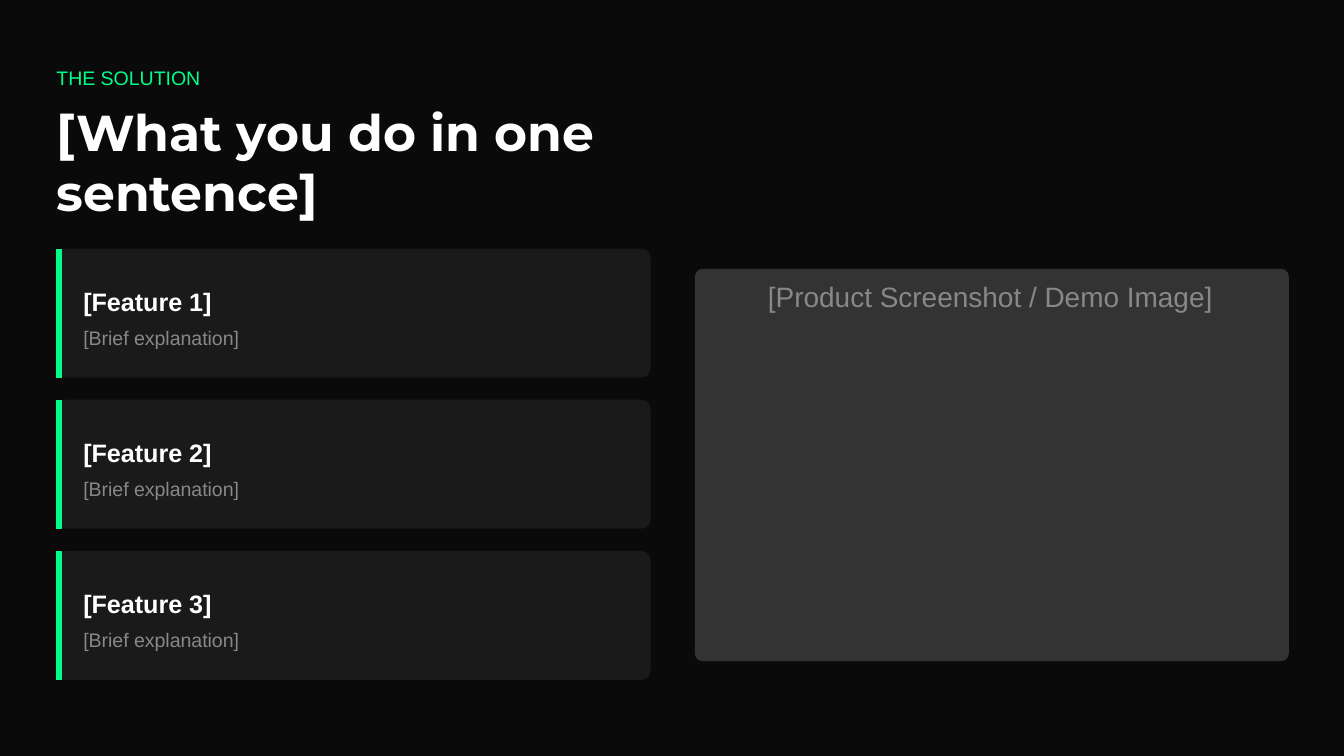
from dataclasses import dataclass
from lxml.etree import SubElement
from pptx import Presentation
from pptx.dml.color import RGBColor
from pptx.enum.shapes import MSO_CONNECTOR, MSO_SHAPE
from pptx.enum.text import MSO_ANCHOR, MSO_AUTO_SIZE, PP_ALIGN
from pptx.oxml.ns import qn
from pptx.util import Inches, Pt


@dataclass(frozen=True)
class Theme:
    back: str = "0A0A0A"
    card: str = "1A1A1A"
    panel: str = "333333"
    accent: str = "00FF88"
    white: str = "FFFFFF"
    gray: str = "888888"
    head: str = "Montserrat"
    body: str = "Arial"
    big: float = 27
    mid: float = 15
    label: float = 13.5
    small: float = 10.5


class Deck:
    def __init__(self, theme, slide):
        self.theme = theme
        self.slide = slide
        fill = slide.background.fill
        fill.solid()
        fill.fore_color.rgb = RGBColor.from_string(theme.back)

    def style(self, shape, words, size, color, lead, before=3, after=3,
              bold=False, font=None, align=PP_ALIGN.LEFT):
        frame = shape.text_frame
        frame.text = words
        frame.word_wrap = True
        frame.auto_size = MSO_AUTO_SIZE.NONE
        frame.vertical_anchor = MSO_ANCHOR.TOP
        frame.margin_left = frame.margin_right = 0
        frame.margin_top = frame.margin_bottom = 0
        para = frame.paragraphs[0]
        para.alignment = align
        para.line_spacing = Pt(lead)
        para.space_before, para.space_after = Pt(before), Pt(after)
        face = para.runs[0].font
        face.name = font or self.theme.body
        face.size, face.bold = Pt(size), bold
        face.color.rgb = RGBColor.from_string(color)

    def title(self, words, *box):
        shape = self.slide.shapes.title
        shape.left, shape.top, shape.width, shape.height = map(Inches, box)
        self.style(shape, words, self.theme.big, self.theme.white, 32.4,
                   before=0, after=24, bold=True, font=self.theme.head)

    def text(self, words, box, size, color, lead, **look):
        shape = self.slide.shapes.add_textbox(*map(Inches, box))
        self.style(shape, words, size, color, lead, **look)

    def panel(self, box, color, round):
        shape = self.slide.shapes.add_shape(
            MSO_SHAPE.ROUNDED_RECTANGLE, *map(Inches, box))
        shape.adjustments[0] = round
        shape.fill.solid()
        shape.fill.fore_color.rgb = RGBColor.from_string(color)
        shape.line.fill.background()
        shape.shadow.inherit = False

    def bar(self, left, top, high):
        line = self.slide.shapes.add_connector(
            MSO_CONNECTOR.STRAIGHT, Inches(left), Inches(top),
            Inches(left), Inches(top + high))
        line.line.color.rgb = RGBColor.from_string(self.theme.accent)
        line.line.width = Pt(3)
        SubElement(line._element.spPr, qn("a:effectLst"))

    def feature(self, name, note, top):
        theme = self.theme
        high = 0.96
        self.panel((0.42, top, 4.42, high), theme.card, 0.07)
        self.bar(0.44, top, high)
        self.text(name, (0.62, top + 0.21, 4.12, 0.29),
                  theme.label, theme.white, 21, bold=True)
        self.text(note, (0.62, top + 0.54, 4.12, 0.21),
                  theme.small, theme.gray, 15)


def main():
    show = Presentation()
    show.slide_width = Inches(10)
    show.slide_height = show.slide_width * 9 // 16
    theme = Theme()
    deck = Deck(theme, show.slides.add_slide(show.slide_layouts[5]))

    deck.text("THE SOLUTION", (0.42, 0.46, 9.35, 0.21),
              theme.small, theme.accent, 15, after=6)
    deck.title("[What you do in one sentence]", 0.42, 0.75, 5.56, 0.45)

    first, last, count = 1.85, 4.1, 3
    step = (last - first) / (count - 1)
    for i in range(count):
        deck.feature(f"[Feature {i + 1}]", "[Brief explanation]",
                     first + i * step)

    deck.panel((5.17, 2, 4.42, 2.92), theme.panel, 0.02)
    deck.text("[Product Screenshot / Demo Image]", (5.12, 2.04, 4.5, 0.29),
              theme.mid, theme.gray, 21, align=PP_ALIGN.CENTER)
    show.save("out.pptx")


if __name__ == "__main__":
    main()
